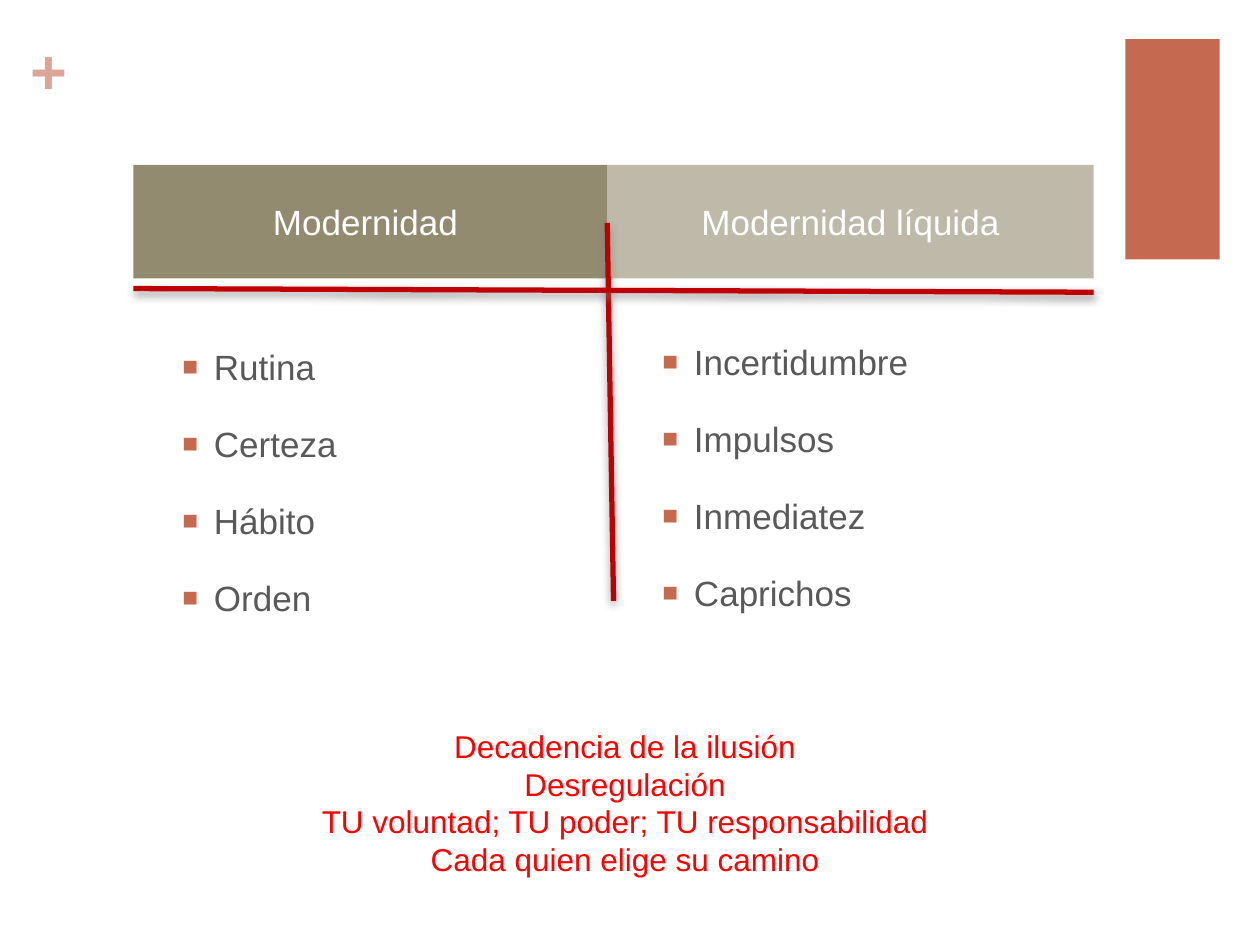
from lxml import etree
from pptx import Presentation
from pptx.dml.color import RGBColor
from pptx.enum.shapes import MSO_CONNECTOR, MSO_SHAPE
from pptx.enum.text import MSO_ANCHOR, MSO_AUTO_SIZE, PP_ALIGN
from pptx.oxml.ns import qn
from pptx.util import Pt

RECTANGLE = MSO_SHAPE.RECTANGLE
STRAIGHT = MSO_CONNECTOR.STRAIGHT
LEFT, CENTER = PP_ALIGN.LEFT, PP_ALIGN.CENTER
TOP, MIDDLE = MSO_ANCHOR.TOP, MSO_ANCHOR.MIDDLE
FIT_SHAPE = MSO_AUTO_SIZE.SHAPE_TO_FIT_TEXT

FONT = "Arial"
ACCENT, PALE_ACCENT = "C66951", "DDA597"
WHITE, GREY, RED, DARK_RED = "FFFFFF", "595959", "FF0000", "C00000"

# Positions are left, top, width, height in points.
HEADER_TOP, HEADER_HEIGHT = 94.3, 64.8
COLUMNS = [
    {"title": "Modernidad ", "fill": "928B70", "left": 76.3, "width": 340.7 - 70,
     "list_at": (97.2, 193.7, 288, 161.3),
     "items": ["Rutina", "Certeza", "Hábito", "Orden"]},
    {"title": "Modernidad líquida", "fill": "BEB9A9", "left": 347, "width": 278,
     "list_at": (371.5, 190.8, 278.6, 164.2),
     "items": ["Incertidumbre", "Impulsos", "Inmediatez", "Caprichos"]},
]
CONCLUSIONS = [
    "Decadencia de la ilusión",
    "Desregulación",
    "TU voluntad; TU poder; TU responsabilidad",
    "Cada quien elige su camino",
]
DIVIDERS = [(347, 127.4, 350.6, 343.4), (76.3, 164.9, 625, 167)]


def rgb(code):
    return RGBColor.from_string(code)


def add_block(page, at, fill):
    block = page.shapes.add_shape(RECTANGLE, *map(Pt, at))
    block.shadow.inherit = False
    block.fill.solid()
    block.fill.fore_color.rgb = rgb(fill)
    block.line.fill.background()
    return block


def add_text_box(page, at):
    return page.shapes.add_textbox(*map(Pt, at))


def write(box, lines, size, color, align=LEFT, anchor=TOP, bold=False, margins=(7.2, 3.6)):
    """Fill the box with one paragraph per line and return its paragraphs."""
    frame = box.text_frame
    frame.word_wrap = True
    frame.vertical_anchor = anchor
    frame.margin_left = frame.margin_right = Pt(margins[0])
    frame.margin_top = frame.margin_bottom = Pt(margins[1])
    frame.text = "\n".join(lines)
    for para in frame.paragraphs:
        para.alignment = align
        para.font.name = FONT
        para.font.size = Pt(size)
        para.font.bold = bold
        para.font.color.rgb = rgb(color)
    return frame.paragraphs


def add_bullet(para):
    para.space_before = Pt(20)
    properties = para._p.get_or_add_pPr()
    properties.set("marL", str(Pt(18)))
    properties.set("indent", str(-Pt(18)))
    bullet = [
        etree.Element(qn("a:buClr")),
        etree.Element(qn("a:buSzPct"), val="75000"),
        etree.Element(qn("a:buFont"), typeface=FONT),
        etree.Element(qn("a:buChar"), char="■"),
    ]
    etree.SubElement(bullet[0], qn("a:srgbClr"), val=ACCENT)
    spacing = properties.find(qn("a:spcBef"))
    for element in reversed(bullet):
        spacing.addnext(element)


def add_divider(page, ends):
    line = page.shapes.add_connector(STRAIGHT, *map(Pt, ends))
    line.line.color.rgb = rgb(DARK_RED)
    line.line.width = Pt(3)
    effects = etree.SubElement(line._element.spPr, qn("a:effectLst"))
    shadow = etree.SubElement(effects, qn("a:outerShdw"), blurRad=str(Pt(5)),
                              dist=str(Pt(2)), dir="5400000", rotWithShape="0")
    tint = etree.SubElement(shadow, qn("a:srgbClr"), val="808080")
    etree.SubElement(tint, qn("a:alpha"), val="75000")


def main():
    deck = Presentation()
    deck.slide_width, deck.slide_height = Pt(720), Pt(540)
    page = deck.slides.add_slide(deck.slide_layouts[6])

    add_block(page, (643, 22.3, 54, 126), ACCENT)
    plus = add_text_box(page, (17.3, 18, 21.1, 43.9))
    write(plus, ["+"], 36, PALE_ACCENT, bold=True, margins=(0, 0))
    plus.text_frame.auto_size = FIT_SHAPE

    for column in COLUMNS:
        header = add_block(
            page, (column["left"], HEADER_TOP, column["width"], HEADER_HEIGHT), column["fill"])
        write(header, [column["title"]], 20, WHITE, CENTER, MIDDLE, margins=(7.2, 0))
        item_box = add_text_box(page, column["list_at"])
        for para in write(item_box, column["items"], 20, GREY):
            add_bullet(para)

    for ends in DIVIDERS:
        add_divider(page, ends)

    conclusion = add_text_box(page, (139, 411.8, 436.3, 94.3))
    write(conclusion, CONCLUSIONS, 18, RED, CENTER)
    conclusion.text_frame.auto_size = FIT_SHAPE

    deck.save("out.pptx")


if __name__ == "__main__":
    main()
